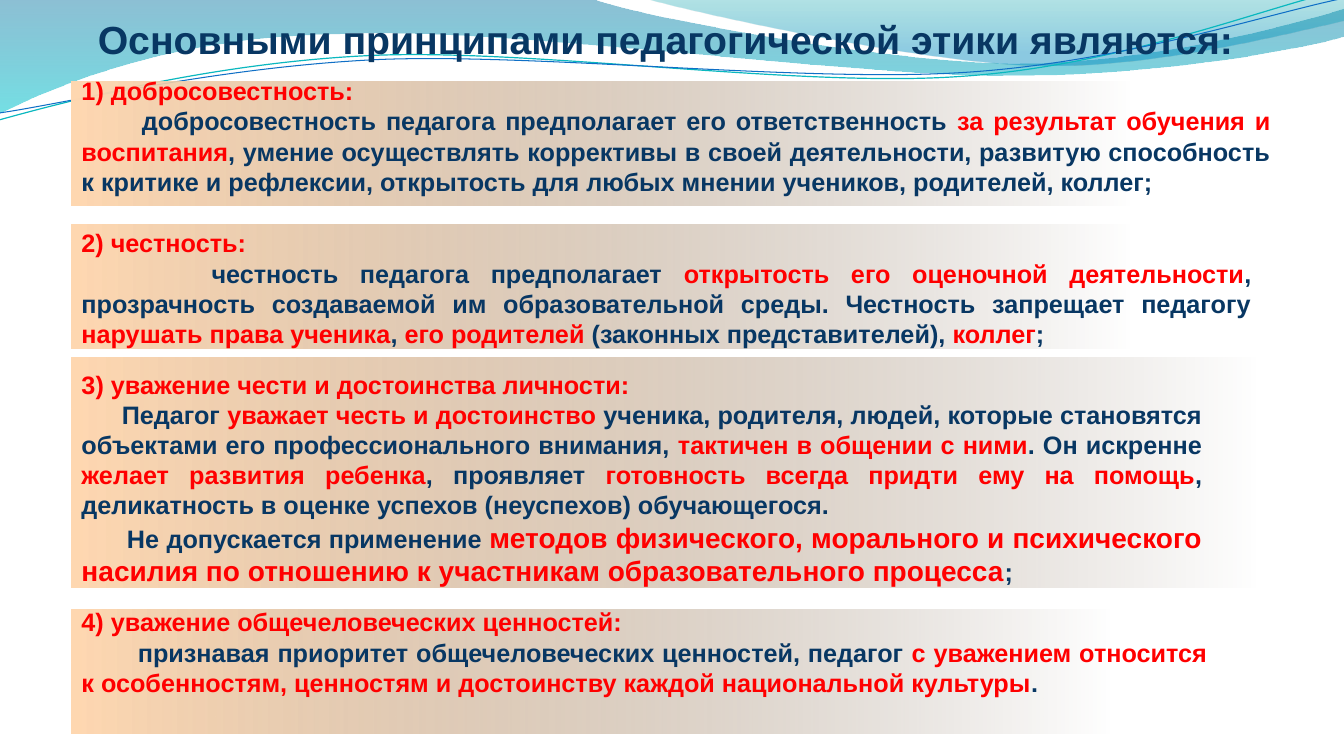
from lxml import etree
from pptx import Presentation
from pptx import util as u
from pptx.dml.color import RGBColor
from pptx.enum import shapes, text
from pptx.oxml import ns

COLORS = {
    "navy": "083763", "red": "FF0000", "peach": "FFD8B1", "brown": "766452",
    "deep_blue": "0074A1", "aqua": "00C6CF", "teal": "00A1A9", "sky": "008BBF",
    "cyan_line": "0AB8BF", "blue_line": "0F6FC6",
}
FRAME = {"word_wrap": True, "auto_size": text.MSO_AUTO_SIZE.NONE,
         "vertical_anchor": text.MSO_ANCHOR.TOP,
         "margin_left": u.Inches(0.1), "margin_right": u.Inches(0.1),
         "margin_top": u.Inches(0.05), "margin_bottom": u.Inches(0.05)}
PARAGRAPH = {"line_spacing": 1.0, "space_before": u.Pt(0), "space_after": u.Pt(0)}
FONT = {"name": "Arial", "bold": True}

WAVES = [
    ((0, 0), [(5.87, -0.01), (6.34, 0.17, 8.85, 0.63, 10.11, 0.63),
              (11.38, 0.63, 12.78, 0.26, 13.33, 0.09), (13.35, 0.36),
              (13.11, 0.44, 11.6, 0.76, 9.94, 0.75),
              (8.29, 0.75, 5.09, 0.28, 3.43, 0.34),
              (1.72, 0.36, 0.61, 0.83, -0.01, 1.13)],
     [(0, "deep_blue", 45), (1, "aqua", 55)]),
    ((6.39, -0.01), [(6.79, 0.11, 9.09, 0.62, 10.25, 0.65),
                     (11.41, 0.69, 12.82, 0.32, 13.33, 0.21), (13.33, 0)],
     [(0, "teal", 30), (0.8, "sky", 45)]),
]
STRANDS = [
    ((-0.01, 1.19), [(0.64, 1.01, 2.11, 0.62, 3.69, 0.55),
                     (5.27, 0.48, 7.9, 0.87, 9.5, 0.76),
                     (11.1, 0.66, 12.52, 0.08, 13.31, -0.1)], "cyan_line", 0.85),
    ((0, 1.12), [(0.63, 1.03, 2.18, 0.66, 3.78, 0.59),
                 (5.37, 0.53, 7.96, 0.82, 9.55, 0.72),
                 (11.15, 0.62, 12.55, 0.14, 13.34, -0.02)], "blue_line", 0.75),
]
PRINCIPLES = [
    ((0.71, 0.81, 10.55, 1.23), (0.71, 0.7, 11.99, 1.31), [
        (0, 18, "|1) добросовестность:"),
        (0.6, 18, "добросовестность педагога предполагает его ответственность "
         "|за результат обучения и воспитания|, умение осуществлять коррективы в своей "
         "деятельности, развитую способность к критике и рефлексии, открытость для любых "
         "мнении учеников, родителей, коллег;")]),
    ((0.71, 2.23, 10.55, 1.23), (0.71, 2.21, 11.8, 1.31), [
        (0, 18, "|2) честность:"),
        (1.29, 18, "честность педагога предполагает |открытость его оценочной деятельности|, "
         "прозрачность создаваемой им образовательной среды. Честность запрещает педагогу "
         "|нарушать права ученика|, |его родителей |(законных представителей), |коллег|;")]),
    ((0.71, 3.55, 11.8, 2.28), (0.71, 3.61, 11.31, 2.29), [
        (0, 18, "|3) уважение чести и достоинства личности:"),
        (0.4, 18, "Педагог |уважает честь и достоинство |ученика, родителя, людей, которые "
         "становятся объектами его профессионального внимания, |тактичен в общении с ними|. "
         "Он искренне |желает развития ребенка|, проявляет |готовность всегда придти ему на "
         "помощь|, деликатность в оценке успехов (неуспехов) обучающегося."),
        (0.45, 20, "Не допускается применение |методов физического, морального и "
         "психического насилия по отношению к участникам образовательного процесса|;")]),
    ((0.71, 6.05, 10.34, 1.23), (0.71, 5.97, 11.36, 1.01), [
        (0, 18, "|4) уважение общечеловеческих ценностей:"),
        (0.56, 18, "признавая приоритет общечеловеческих ценностей, педагог |с уважением "
         "относится к особенностям, ценностям и достоинству каждой национальной культуры|.")]),
]


def apply(target, values):
    for name, value in values.items():
        setattr(target, name, value)


class EthicsSlide:
    def __init__(self, deck):
        self.slide = deck.slides.add_slide(deck.slide_layouts[5])
        self.shapes = self.slide.shapes

    def color(self, key):
        return RGBColor.from_string(COLORS[key])

    def gradient(self, shape, stops, angle):
        shape.fill.gradient()
        shape.fill.gradient_angle = angle
        for stop, (position, key, opacity) in zip(shape.fill.gradient_stops, stops):
            stop.position = position
            stop.color.rgb = self.color(key)
        marks = shape.element.spPr.iter(ns.qn("a:srgbClr"))
        for mark, (position, key, opacity) in zip(marks, stops):
            if opacity < 100:
                etree.SubElement(mark, ns.qn("a:alpha"), val=str(opacity * 1000))

    def outline(self, start, segments, close):
        builder = self.shapes.build_freeform(*map(u.Inches, start))
        ends = [tuple(map(u.Inches, segment[-2:])) for segment in segments]
        builder.add_line_segments(ends, close=close)
        shape = builder.convert_to_shape()
        shape.shadow.inherit = False
        for side, segment in zip(list(shape.element.iter(ns.qn("a:lnTo"))), segments):
            if len(segment) == 6:
                bend = etree.Element(ns.qn("a:cubicBezTo"))
                for x, y in zip(segment[::2], segment[1::2]):
                    etree.SubElement(bend, ns.qn("a:pt"), x=str(u.Inches(x) - shape.left),
                                     y=str(u.Inches(y) - shape.top))
                side.getparent().replace(side, bend)
        return shape

    def wave(self, start, segments, stops):
        shape = self.outline(start, segments, True)
        shape.line.fill.background()
        self.gradient(shape, stops, 270)

    def strand(self, start, segments, key, width):
        shape = self.outline(start, segments, False)
        shape.fill.background()
        shape.line.color.rgb = self.color(key)
        shape.line.width = u.Pt(width)

    def band(self, box):
        shape = self.shapes.add_shape(shapes.MSO_SHAPE.RECTANGLE, *map(u.Inches, box))
        shape.shadow.inherit = False
        shape.line.fill.background()
        self.gradient(shape, [(0, "peach", 100), (1, "brown", 0)], 0)

    def run(self, paragraph, words, key, size):
        run = paragraph.add_run()
        run.text = words
        apply(run.font, {**FONT, "size": u.Pt(size)})
        run.font.color.rgb = self.color(key)

    def title(self, words, box):
        heading = self.shapes.title
        apply(heading, dict(zip(("left", "top", "width", "height"), map(u.Inches, box))))
        apply(heading.text_frame, FRAME)
        paragraph = heading.text_frame.paragraphs[0]
        apply(paragraph, {**PARAGRAPH, "alignment": text.PP_ALIGN.CENTER})
        self.run(paragraph, words, "navy", 28)
        self.shapes.element.append(heading.element)

    def passage(self, box, paragraphs):
        frame = self.shapes.add_textbox(*map(u.Inches, box)).text_frame
        apply(frame, FRAME)
        for number, (indent, accent_size, words) in enumerate(paragraphs):
            paragraph = frame.add_paragraph() if number else frame.paragraphs[0]
            apply(paragraph, {**PARAGRAPH, "alignment": text.PP_ALIGN.JUSTIFY})
            paragraph._p.get_or_add_pPr().set("indent", str(u.Inches(indent)))
            for part, phrase in enumerate(words.split("|")):
                if phrase:
                    accent = part % 2
                    self.run(paragraph, phrase, "red" if accent else "navy",
                             accent_size if accent else 18)


def main():
    deck = Presentation()
    apply(deck, {"slide_width": u.Inches(13.33), "slide_height": u.Inches(7.5)})
    ethics = EthicsSlide(deck)
    for wave in WAVES:
        ethics.wave(*wave)
    for strand in STRANDS:
        ethics.strand(*strand)
    ethics.title("Основными принципами педагогической этики являются:", (0.5, 0.1, 12.2, 0.57))
    for band, box, paragraphs in PRINCIPLES:
        ethics.band(band)
        ethics.passage(box, paragraphs)
    deck.save("out.pptx")


if __name__ == "__main__":
    main()
